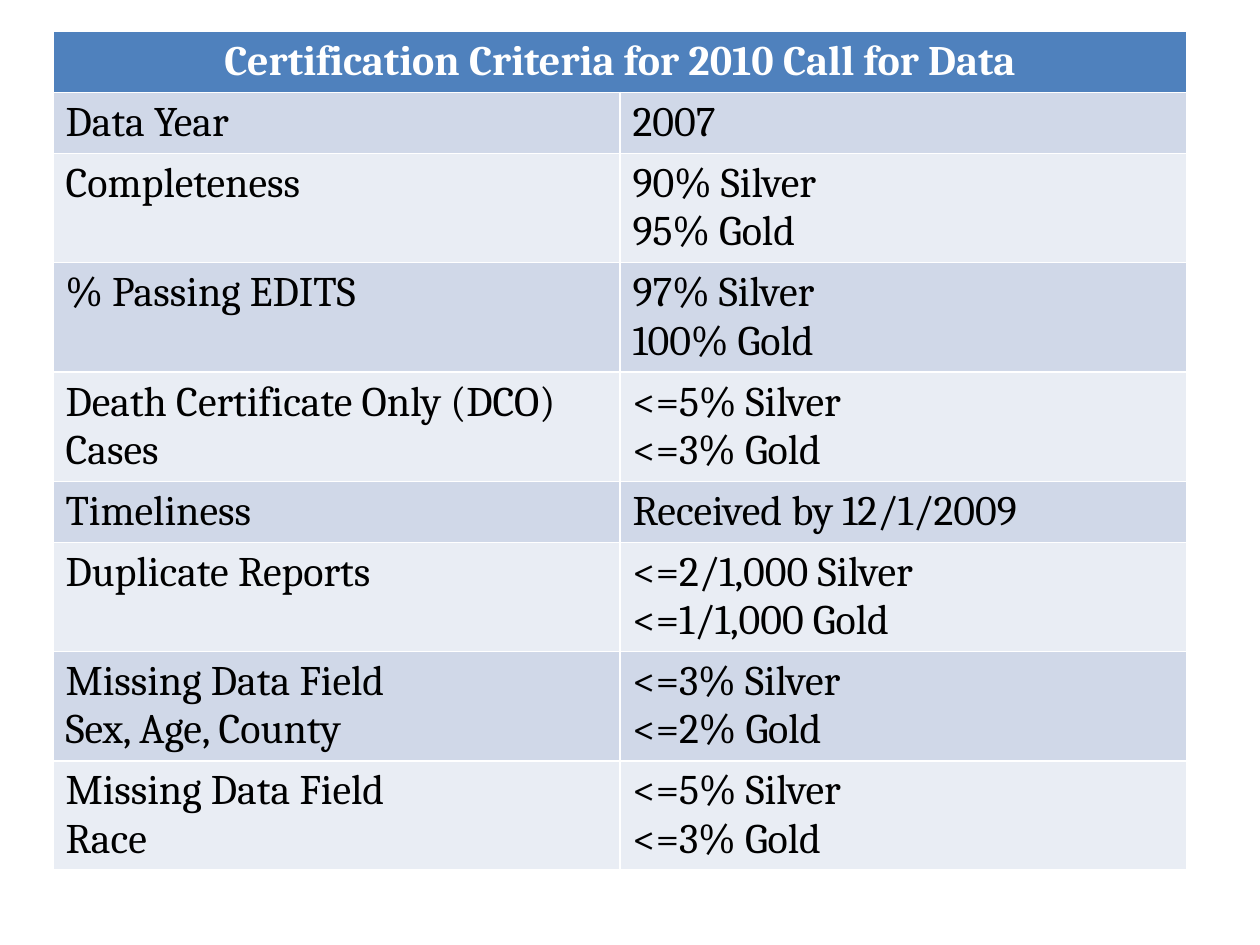
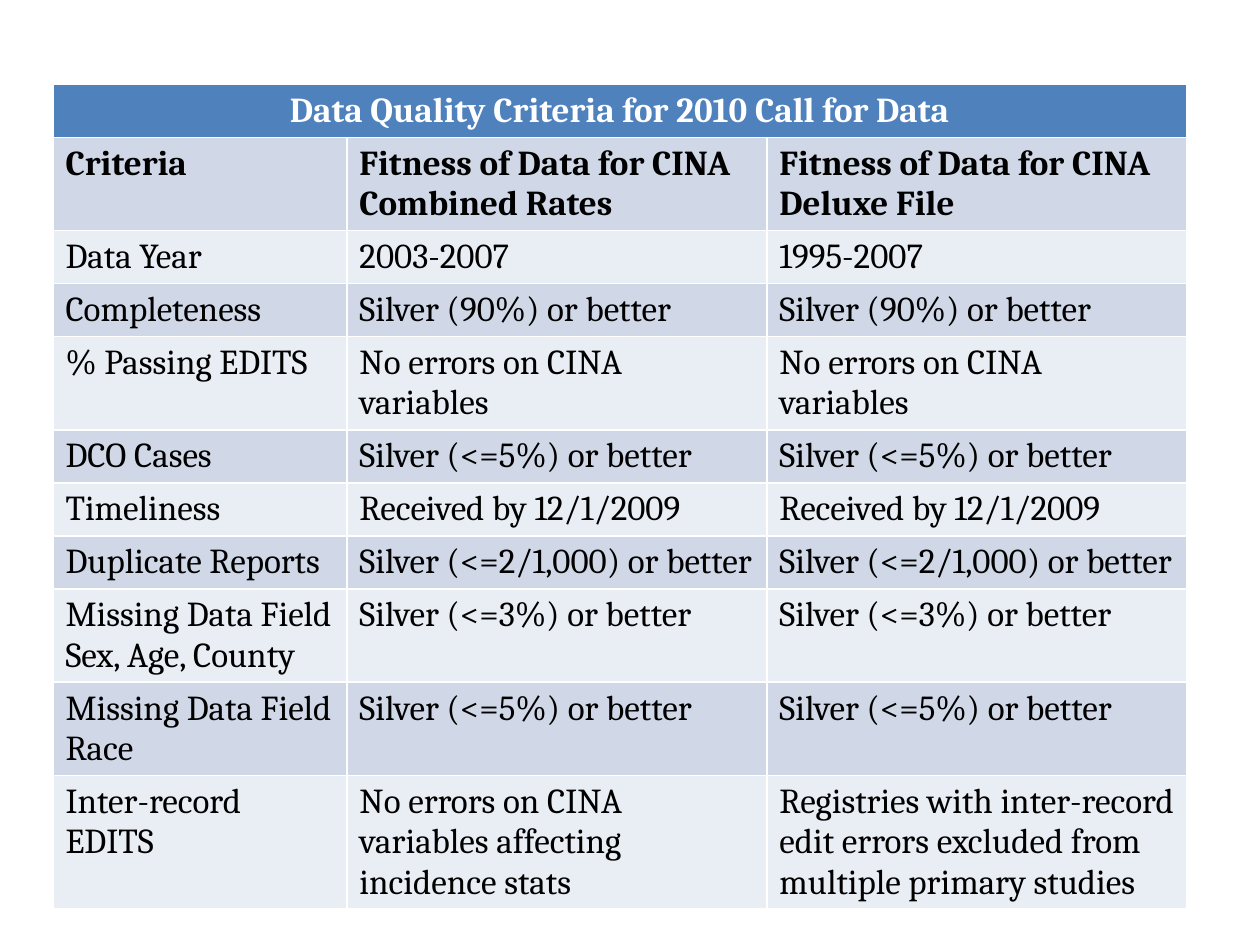
from dataclasses import dataclass

from pptx import Presentation
from pptx.dml.color import RGBColor
from pptx.enum.text import PP_ALIGN
from pptx.util import Inches, Pt


@dataclass(frozen=True)
class Theme:
    font: str = "Cambria"
    header_fill: RGBColor = RGBColor(0x4F, 0x81, 0xBD)
    odd_fill: RGBColor = RGBColor(0xD0, 0xD8, 0xE8)
    even_fill: RGBColor = RGBColor(0xE9, 0xED, 0xF4)
    header_text: RGBColor = RGBColor(0xFF, 0xFF, 0xFF)
    body_text: RGBColor = RGBColor(0, 0, 0)
    large: Pt = Pt(24)
    medium: Pt = Pt(20)


theme = Theme()
table_left, table_width = Inches(0.42), Inches(9)
row_height = Inches(0.41)


def fill_cell(cell, text, size, fill, color, bold=False, align=None):
    cell.fill.solid()
    cell.fill.fore_color.rgb = fill
    for index, line in enumerate(text.split("\n")):
        frame = cell.text_frame
        para = frame.add_paragraph() if index else frame.paragraphs[0]
        para.alignment = align
        span = para.add_run()
        span.text = line
        span.font.name = theme.font
        span.font.size = size
        span.font.bold = bold
        span.font.color.rgb = color


certification_rows = [
    ("Data Year", "2007"),
    ("Completeness", "90% Silver\n95% Gold"),
    ("% Passing EDITS", "97% Silver\n100% Gold"),
    ("Death Certificate Only (DCO) Cases", "<=5% Silver\n<=3% Gold"),
    ("Timeliness", "Received by 12/1/2009"),
    ("Duplicate Reports", "<=2/1,000 Silver\n<=1/1,000 Gold"),
    ("Missing Data Field\nSex, Age, County", "<=3% Silver\n<=2% Gold"),
    ("Missing Data Field\nRace", "<=5% Silver\n<=3% Gold"),
]

shared_criteria = [
    ("Completeness", "Silver (90%) or better"),
    ("% Passing EDITS", "No errors on CINA variables"),
    ("DCO Cases", "Silver (<=5%) or better"),
    ("Timeliness", "Received by 12/1/2009"),
    ("Duplicate Reports", "Silver (<=2/1,000) or better"),
    ("Missing Data Field\nSex, Age, County", "Silver (<=3%) or better"),
    ("Missing Data Field\nRace", "Silver (<=5%) or better"),
]
quality_rows = [
    ("Criteria", "Fitness of Data for CINA Combined Rates", "Fitness of Data for CINA Deluxe File"),
    ("Data Year", "2003-2007", "1995-2007"),
    *[(criterion, level, level) for criterion, level in shared_criteria],
    (
        "Inter-record EDITS",
        "No errors on CINA variables affecting incidence stats",
        "Registries with inter-record edit errors excluded from multiple primary studies",
    ),
]

criteria_tables = [
    ("Certification Criteria for 2010 Call for Data", certification_rows,
     (1, 1), 0.25, 6.9, theme.large, False),
    ("Data Quality Criteria for 2010 Call for Data", quality_rows,
     (7, 10, 10), 0.67, 6.43, theme.medium, True),
]

deck = Presentation()
deck.slide_width, deck.slide_height = Inches(10), Inches(7.5)

for title, rows, shares, top, height, size, has_subheader in criteria_tables:
    page = deck.slides.add_slide(deck.slide_layouts[6])
    frame = page.shapes.add_table(
        len(rows) + 1, len(shares), table_left, Inches(top), table_width, Inches(height)
    )
    table = frame.table
    for column, share in zip(table.columns, shares):
        column.width = int(table_width * share / sum(shares))
    for row in table.rows:
        row.height = row_height
    frame.height = Inches(height)

    header = table.cell(0, 0)
    header.merge(table.cell(0, len(shares) - 1))
    fill_cell(header, title, size, theme.header_fill, theme.header_text, True, PP_ALIGN.CENTER)

    for row_index, texts in enumerate(rows, start=1):
        fill = theme.odd_fill if row_index % 2 else theme.even_fill
        bold = has_subheader and row_index == 1
        for column_index, text in enumerate(texts):
            cell = table.cell(row_index, column_index)
            fill_cell(cell, text, size, fill, theme.body_text, bold)

deck.save("out.pptx")
